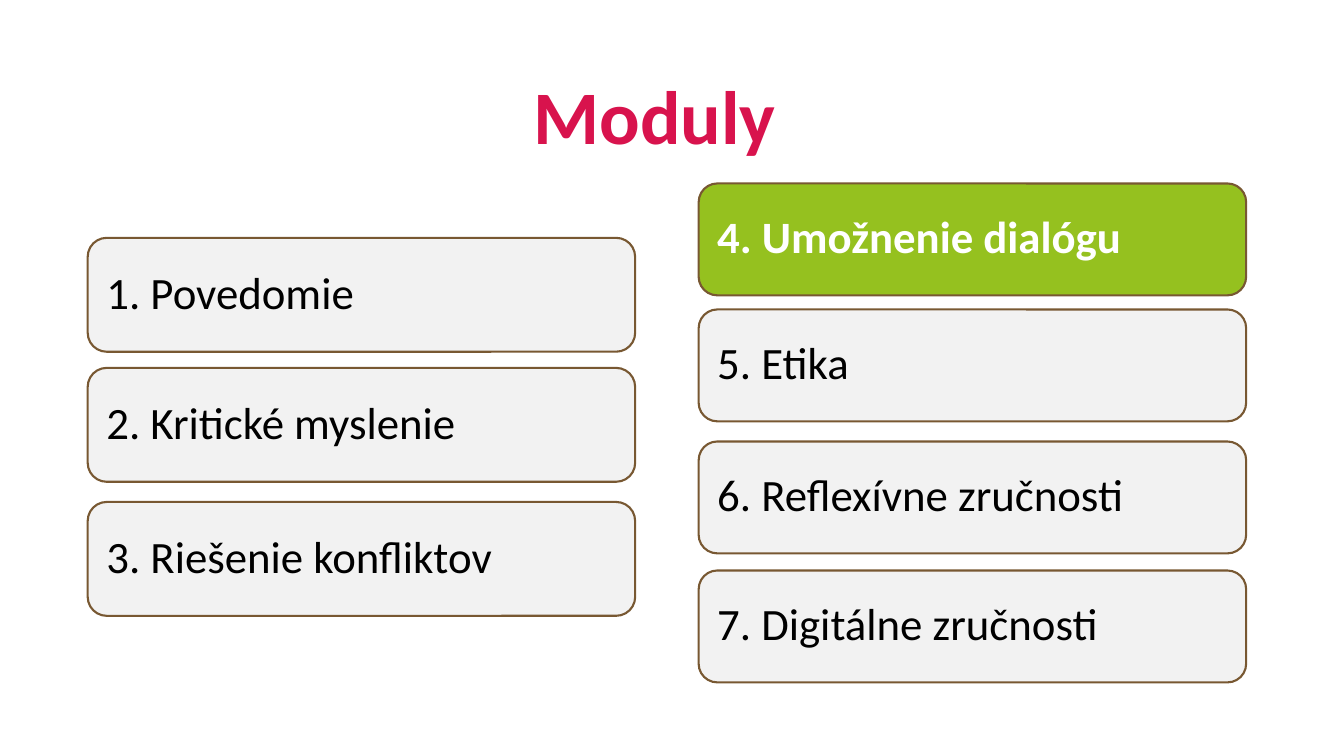
from pptx import Presentation
from pptx.dml.color import RGBColor
from pptx.enum.shapes import MSO_SHAPE
from pptx.enum.text import MSO_ANCHOR, MSO_AUTO_SIZE, PP_ALIGN
from pptx.util import Pt

EMU_PER_PX = 9144  # 100 px to the inch


def px(length):
    return length * EMU_PER_PX


def color(hex_code):
    return RGBColor.from_string(hex_code)


class ModulePage:
    """Holds the slide and the style its elements share."""

    font = "Calibri"
    title_color = "D8134D"
    outline = "785832"
    plain = ("F2F2F2", "000000")
    active = ("95C11F", "FFFFFF")

    def __init__(self, deck):
        self.page = deck.slides.add_slide(deck.slide_layouts[5])

    def set_text(self, frame, text, size, text_color, bold, align, anchor):
        frame.word_wrap = True
        frame.auto_size = MSO_AUTO_SIZE.NONE
        frame.vertical_anchor = anchor
        para = frame.paragraphs[0]
        para.text = text
        para.alignment = align
        para.line_spacing = 0.9
        para.font.name = self.font
        para.font.size = Pt(size)
        para.font.bold = bold
        para.font.color.rgb = color(text_color)

    def title(self, text, left, top, width, height):
        box = self.page.shapes.title
        box.left, box.top = px(left), px(top)
        box.width, box.height = px(width), px(height)
        self.set_text(box.text_frame, text, 54, self.title_color, True,
                      PP_ALIGN.CENTER, MSO_ANCHOR.BOTTOM)

    def card(self, group, text, left, top, width, height, is_active):
        fill, text_color = self.active if is_active else self.plain
        box = group.shapes.add_shape(MSO_SHAPE.ROUNDED_RECTANGLE, px(left),
                                     px(top), px(width), px(height))
        box.shadow.inherit = False
        box.fill.solid()
        box.fill.fore_color.rgb = color(fill)
        box.line.color.rgb = color(self.outline)
        box.line.width = Pt(1.5)
        frame = box.text_frame
        frame.margin_left = frame.margin_right = px(13)
        frame.margin_top = frame.margin_bottom = px(13)
        self.set_text(frame, text, 32, text_color, is_active,
                      PP_ALIGN.LEFT, MSO_ANCHOR.MIDDLE)

    def column(self, left, height, modules, active=None):
        """Add a group of cards from (top, label) pairs."""
        group = self.page.shapes.add_group_shape()
        for top, label in modules:
            self.card(group, label, left, top, 543, height, label == active)


def main():
    deck = Presentation()
    deck.slide_width, deck.slide_height = px(1333), px(750)
    page = ModulePage(deck)
    page.title("Moduly", 1, -30, 1297, 195)
    page.column(87, 113, [
        (236, "1. Povedomie"),
        (365, "2. Kritické myslenie"),
        (498, "3. Riešenie konfliktov"),
    ])
    page.column(693, 111, [
        (182, "4. Umožnenie dialógu"),
        (307, "5. Etika"),
        (438, "6. Reflexívne zručnosti"),
        (566, "7. Digitálne zručnosti"),
    ], active="4. Umožnenie dialógu")
    deck.save("out.pptx")


if __name__ == "__main__":
    main()
